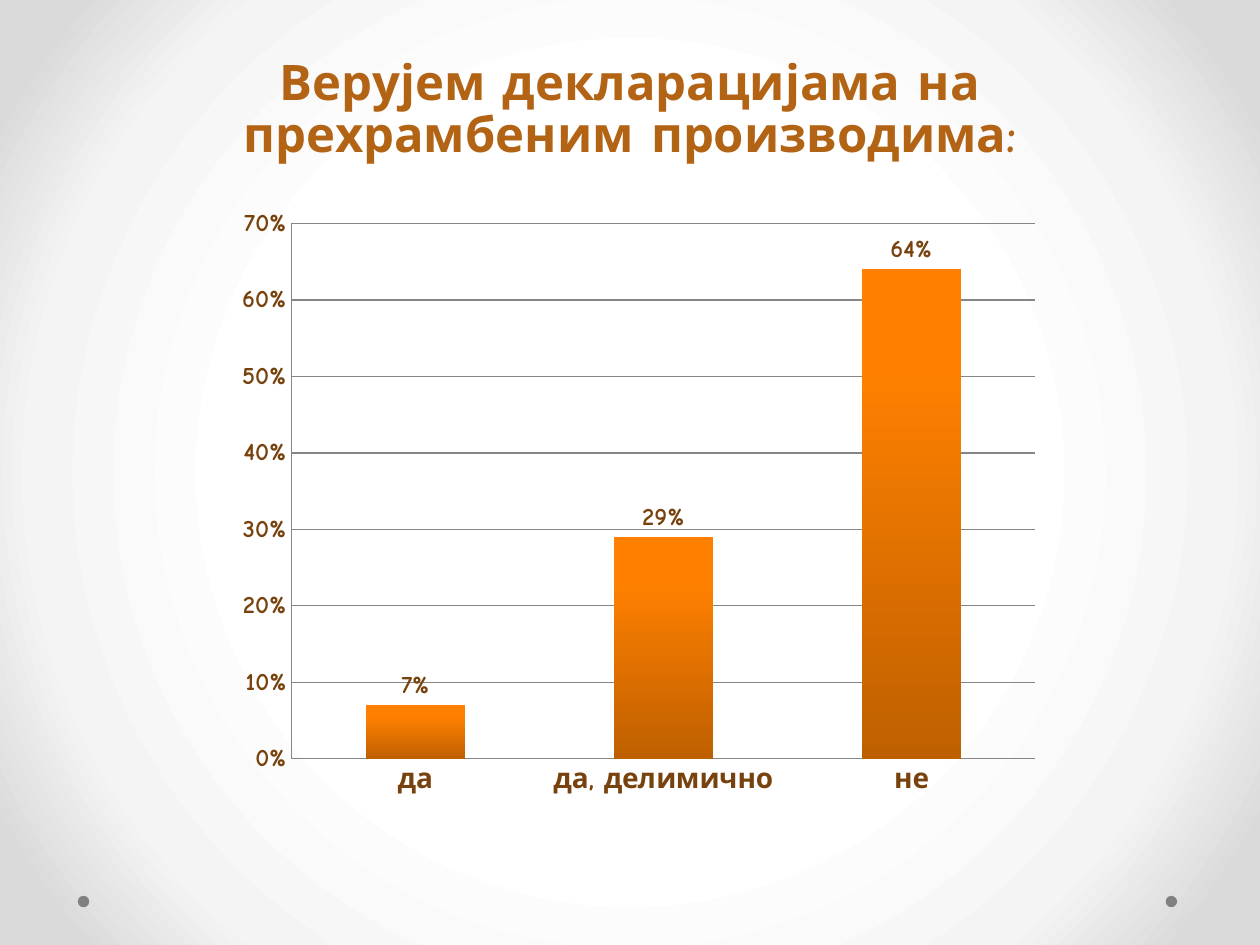
"""Build a slide with a column chart about trust in food labels."""
from lxml import etree
from pptx import Presentation
from pptx import util as u
from pptx.chart import data
from pptx.dml.color import RGBColor
from pptx.enum import chart as ch, shapes, text
from pptx.oxml import parse_xml
from pptx.oxml.ns import nsdecls, qn

FONT = "Comic Neue"
COLORS = {
    "title": "B26314", "label": "77420D", "line": "868686", "dot": "808080",
    "bar_top": "FF8000", "bar_bottom": "BF6000",
}
BACKGROUND = [(50, "FFFFFF"), (76, "F4F4F4"), (92, "DADADA")]


def rgb(name):
    return RGBColor.from_string(COLORS[name])


def set_font(font, size, color):
    font.name = FONT
    font.size = u.Pt(size)
    font.bold = True
    font.color.rgb = rgb(color)


prs = Presentation()
prs.slide_width, prs.slide_height = u.Cm(25.4), u.Cm(19.05)
s = prs.slides.add_slide(prs.slide_layouts[5])

fill = s.background.fill
fill.gradient()
stops = "".join(
    f'<a:gs pos="{pos * 1000}"><a:srgbClr val="{color}"/></a:gs>' for pos, color in BACKGROUND
)
grad = parse_xml(
    f'<a:gradFill {nsdecls("a")} rotWithShape="1"><a:gsLst>{stops}</a:gsLst><a:path path="circle">'
    '<a:fillToRect l="50000" t="50000" r="50000" b="50000"/></a:path></a:gradFill>'
)
old = next(s.element.iter(qn("a:gradFill")))
old.getparent().replace(old, grad)

for left in (23.5, 1.57):
    sp = s.shapes.add_shape(
        shapes.MSO_SHAPE.OVAL, u.Cm(left), u.Cm(18.06), u.Cm(0.23), u.Cm(0.23)
    )
    sp.shadow.inherit = False
    sp.fill.solid()
    sp.fill.fore_color.rgb = rgb("dot")
    sp.line.fill.background()

title = s.shapes.title
title.left, title.top, title.width, title.height = u.Cm(1.7), u.Cm(0.91), u.Cm(22), u.Cm(2.64)
tf = title.text_frame
tf.word_wrap = True
tf.auto_size = text.MSO_AUTO_SIZE.NONE
tf.vertical_anchor = text.MSO_ANCHOR.MIDDLE
p = tf.paragraphs[0]
p.alignment = text.PP_ALIGN.CENTER
p.line_spacing = 0.9
r = p.add_run()
r.text = "Верујем декларацијама на прехрамбеним производима:"
set_font(r.font, 28, "title")

answers = data.CategoryChartData(number_format="0%")
answers.categories = ["да", "да, делимично", "не"]
answers.add_series("Series 1", (0.07, 0.29, 0.64))
chart = s.shapes.add_chart(
    ch.XL_CHART_TYPE.COLUMN_CLUSTERED, u.Cm(2.49), u.Cm(3.12), u.Cm(20.4), u.Cm(13.59), answers
).chart
chart.has_title = False
chart.has_legend = False
set_font(chart.font, 14, "label")

for axis, size in ((chart.category_axis, 16), (chart.value_axis, 14)):
    axis.major_tick_mark = axis.minor_tick_mark = ch.XL_TICK_MARK.NONE
    axis.format.line.color.rgb = rgb("line")
    axis.format.line.width = u.Pt(0.75)
    set_font(axis.tick_labels.font, size, "label")
values = chart.value_axis
values.minimum_scale, values.maximum_scale, values.major_unit = 0, 0.7, 0.1
values.tick_labels.number_format = "0%"
values.tick_labels.number_format_is_linked = False
values.has_major_gridlines = True
values.major_gridlines.format.line.color.rgb = rgb("line")
values.major_gridlines.format.line.width = u.Pt(0.75)

plot = chart.plots[0]
plot.gap_width = 150
plot.vary_by_categories = False
bar_fill = plot.series[0].format.fill
bar_fill.gradient()
bar_fill.gradient_angle = 270
for stop, name, position in zip(bar_fill.gradient_stops, ("bar_top", "bar_bottom"), (0.2, 1)):
    stop.color.rgb = rgb(name)
    stop.position = position
plot.has_data_labels = True
labels = plot.data_labels
labels.show_value = True
labels.number_format = "0%"
labels.number_format_is_linked = False
labels.position = ch.XL_LABEL_POSITION.OUTSIDE_END
set_font(labels.font, 14, "label")

plot_area = next(chart.element.iter(qn("c:plotArea")))
for layout in plot_area.findall(qn("c:layout")):
    plot_area.remove(layout)
layout = etree.Element(qn("c:layout"))
manual = etree.SubElement(layout, qn("c:manualLayout"))
for tag, value in (
    ("layoutTarget", "inner"), ("xMode", "edge"), ("yMode", "edge"),
    ("x", 0.166), ("y", 0.102), ("w", 0.735), ("h", 0.794),
):
    etree.SubElement(manual, qn(f"c:{tag}"), val=str(value))
plot_area.insert(0, layout)

prs.save("out.pptx")
